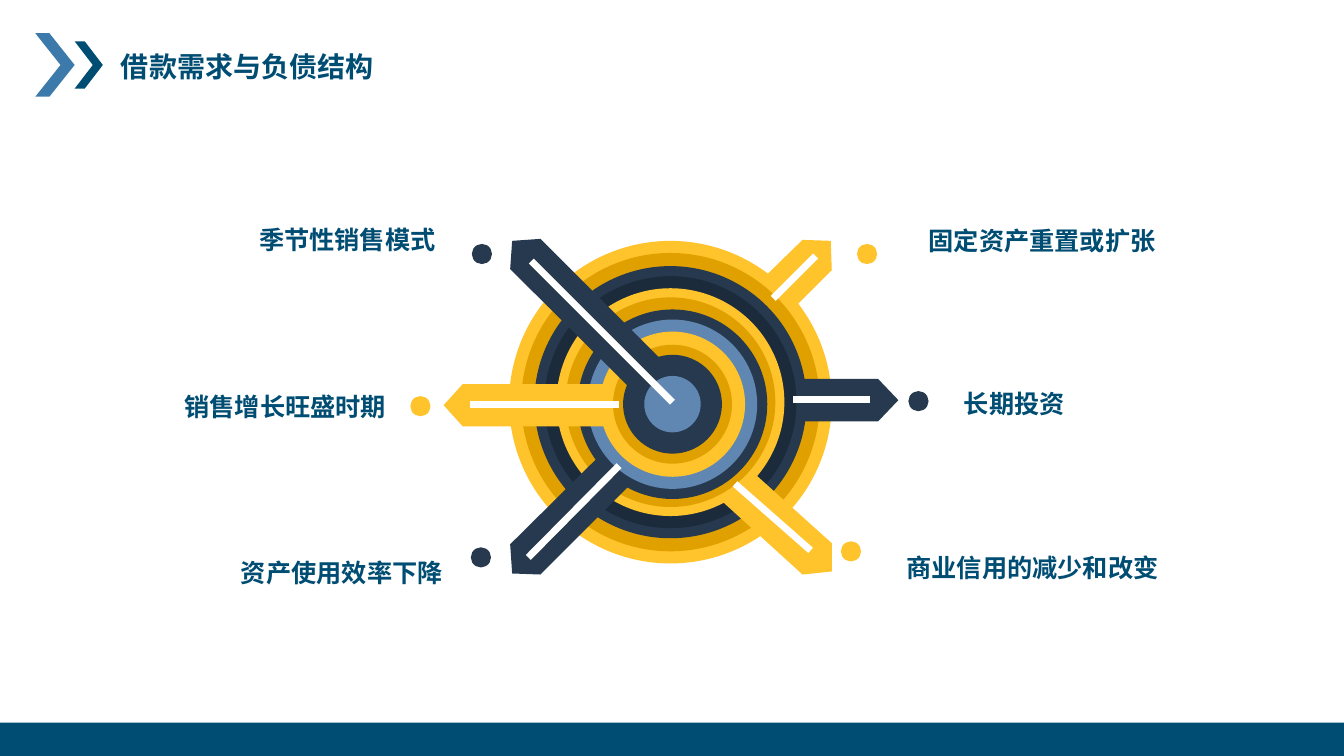
from lxml import etree
from pptx import Presentation
from pptx import util as u
from pptx.dml import color
from pptx.enum import shapes, text
from pptx.oxml import ns

TEAL, BLUE, NAVY, DARK = "004D73", "3C7AAB", "26394E", "1C2B3B"
GOLD, AMBER, SKY, WHITE = "FFC32B", "E0A000", "6087B2", "FFFFFF"
CJK = "Noto Sans CJK SC"

RINGS = [
    (0, 1.6, GOLD, 1.48, AMBER,
     [(1.31, -1.61), (1.59, -1.6), (1.6, -1.31), (1.17, -0.88), (0.87, -1.18)],
     [(1.44, -1.45), (1.02, -1.03)]),
    (0, 1.35, NAVY, 1.25, DARK,
     [(2.06, 0.19), (2.26, -0.02), (2.06, -0.23), (1.15, -0.23), (1.15, 0.19)],
     [(1.98, -0.03), (1.22, -0.03)]),
    (0, 1.13, GOLD, 1.04, AMBER,
     [(0.42, 0.9), (1.31, 1.71), (1.6, 1.68), (1.6, 1.4), (0.69, 0.58)],
     [(1.39, 1.47), (0.64, 0.81)]),
    (0.02, 0.94, NAVY, 0.84, SKY,
     [(-0.58, 0.41), (-1.59, 1.41), (-1.57, 1.7), (-1.29, 1.71), (-0.27, 0.69)],
     [(-1.41, 1.54), (-0.51, 0.63)]),
    (0.02, 0.72, GOLD, 0.59, AMBER,
     [(-0.5, -0.18), (-2.06, -0.18), (-2.25, 0.03), (-2.06, 0.24), (-0.5, 0.24)],
     [(-1.99, 0.02), (-0.51, 0.02)]),
    (0.02, 0.49, NAVY, 0.28, SKY,
     [(-1.29, -1.62), (-1.57, -1.6), (-1.59, -1.32), (-0.28, -0.02), (0.02, -0.31)],
     [(0.02, 0), (-1.38, -1.4)]),
]

LEFT, RIGHT = text.PP_ALIGN.LEFT, text.PP_ALIGN.RIGHT
LABELS = [
    ("固定资产重置或扩张", (9.19, 2.12, 2.68, 0.47), LEFT, 1.2, (8.6, 2.52), GOLD),
    ("长期投资", (9.54, 3.83, 1.93, 0.35), LEFT, 1, (9.11, 3.98), NAVY),
    ("商业信用的减少和改变", (8.97, 5.44, 2.9, 0.32), LEFT, 1.2, (8.44, 5.47), GOLD),
    ("资产使用效率下降", (1.96, 5.43, 2.45, 0.44), RIGHT, 1.2, (4.77, 5.53), NAVY),
    ("销售增长旺盛时期", (1.58, 3.79, 2.27, 0.43), RIGHT, 1.2, (4.17, 4.03), GOLD),
    ("季节性销售模式", (1.51, 2.2, 2.83, 0.3), RIGHT, 1.2, (4.78, 2.52), NAVY),
]


def rgb(code):
    return color.RGBColor.from_string(code)


def paint(shape, code):
    shape.shadow.inherit = False
    shape.fill.solid()
    shape.fill.fore_color.rgb = rgb(code)
    shape.line.fill.background()


def place(shape, box):
    shape.left, shape.top, shape.width, shape.height = map(u.Inches, box)


def disc(slide, x, y, r, code):
    oval = slide.shapes.add_shape(
        shapes.MSO_SHAPE.OVAL, *map(u.Inches, (x - r, y - r, 2 * r, 2 * r)))
    paint(oval, code)


def poly(slide, x, y, points, code):
    spots = [(u.Inches(x + dx), u.Inches(y + dy)) for dx, dy in points]
    pen = slide.shapes.build_freeform(*spots[0])
    pen.add_line_segments(spots[1:], close=True)
    paint(pen.convert_to_shape(), code)


def stripe(slide, x, y, ends):
    spots = [u.Inches(n) for dx, dy in ends for n in (x + dx, y + dy)]
    line = slide.shapes.add_connector(shapes.MSO_CONNECTOR.STRAIGHT, *spots)
    line.line.color.rgb = rgb(WHITE)
    line.line.width = u.Pt(5)
    etree.SubElement(line._element.spPr, ns.qn("a:effectLst"))


def write(frame, words, size, face, align, gap, inset):
    frame.word_wrap = True
    frame.vertical_anchor = text.MSO_ANCHOR.MIDDLE
    frame.margin_left = frame.margin_right = u.Inches(inset)
    frame.margin_top = frame.margin_bottom = u.Inches(0.02)
    para = frame.paragraphs[0]
    para.alignment = align
    para.line_spacing = gap
    run = para.add_run()
    run.text = words
    font = run.font
    font.size = u.Pt(size)
    font.bold = True
    font.name = face
    font.color.rgb = rgb(TEAL)
    east = etree.SubElement(run._r.get_or_add_rPr(), ns.qn("a:ea"))
    east.set("typeface", CJK)


def header(slide, x, y):
    for dx, dy, w, h, nib, code in [
            (0, 0, 0.39, 0.63, 0.14, BLUE), (0.39, 0.08, 0.28, 0.47, 0.1, TEAL)]:
        points = [(0, 0), (nib, 0), (w, h / 2), (nib, h), (0, h), (w - nib, h / 2)]
        poly(slide, x + dx, y + dy, points, code)
    title = slide.shapes.title
    place(title, (x + 0.75, y + 0.11, 4.94, 0.44))
    write(title.text_frame, "借款需求与负债结构", 20, CJK, LEFT, 1, 0.1)


def footer(slide, box):
    bar = slide.shapes.add_shape(shapes.MSO_SHAPE.RECTANGLE, *map(u.Inches, box))
    paint(bar, TEAL)


def target(slide, x, y):
    for shift, outer, rim, inner, core, arm, ends in RINGS:
        disc(slide, x + shift, y + shift, outer, rim)
        poly(slide, x, y, arm, rim)
        disc(slide, x + shift, y + shift, inner, core)
        stripe(slide, x, y, ends)


def label(slide, words, box, align, gap, dot, code):
    note = slide.shapes.add_textbox(*map(u.Inches, box))
    write(note.text_frame, words, 18, "Lato", align, gap, 0.02)
    disc(slide, *dot, 0.1, code)


def main():
    deck = Presentation()
    deck.slide_width, deck.slide_height = u.Inches(13.33), u.Inches(7.5)
    slide = deck.slides.add_slide(deck.slide_layouts[5])
    header(slide, 0.35, 0.33)
    footer(slide, (0, 7.17, 13.33, 0.33))
    target(slide, 6.65, 3.99)
    for item in LABELS:
        label(slide, *item)
    deck.save("out.pptx")


if __name__ == "__main__":
    main()
